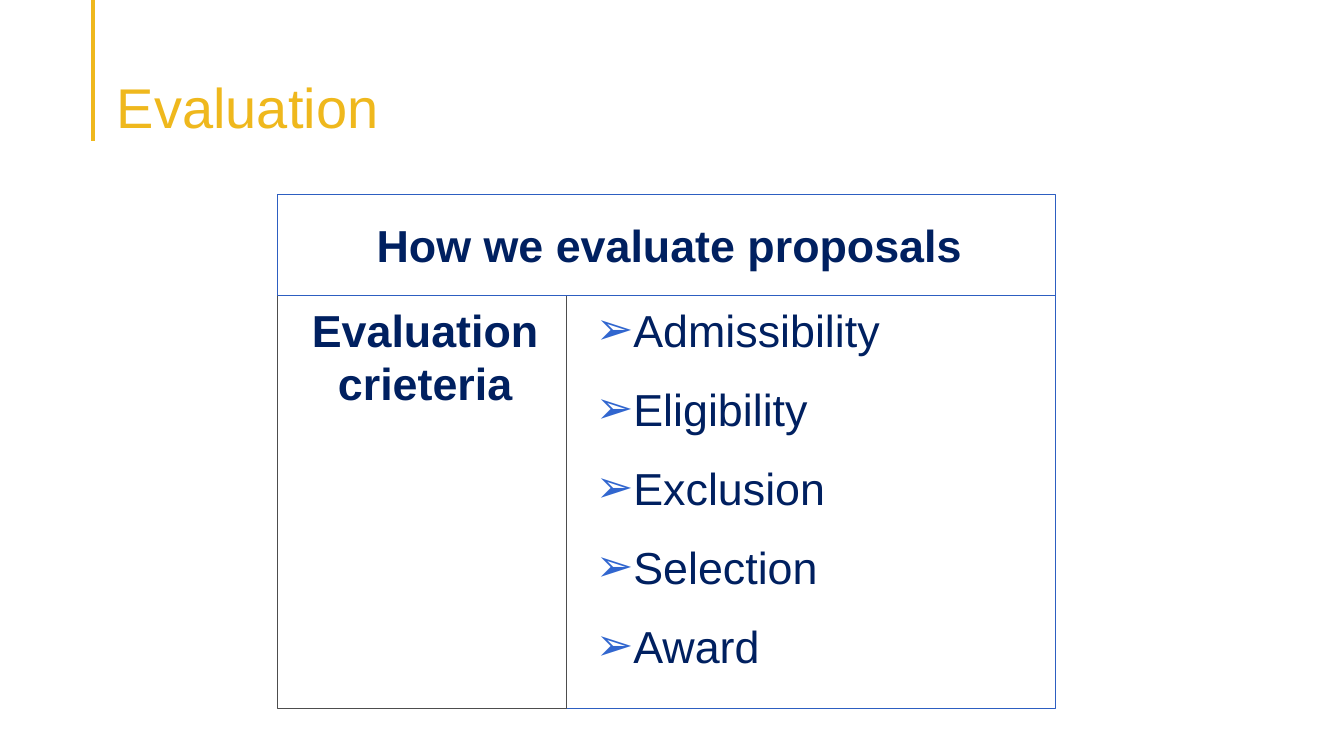
from lxml import etree
from pptx import Presentation
from pptx import util as u
from pptx.dml.color import RGBColor
from pptx.enum import shapes, text
from pptx.oxml import ns

GOLD = RGBColor(0xEF, 0xB8, 0x1D)
NAVY = RGBColor(0x00, 0x20, 0x60)
BLUE = RGBColor(0x2D, 0x5E, 0xC1)
GREY = RGBColor(0x4D, 0x4D, 0x4D)
BULLET_BLUE = RGBColor(0x31, 0x66, 0xCF)
CRITERIA = ["Admissibility", "Eligibility", "Exclusion", "Selection", "Award"]


def style(paragraph, size, color, bold=False):
    """Set the font of a whole paragraph."""
    font = paragraph.font
    font.name, font.size, font.bold = "Arial", u.Pt(size), bold
    font.color.rgb = color


def add_bullet(paragraph):
    """Give a paragraph a blue arrow bullet with a hanging indent."""
    properties = paragraph._p.get_or_add_pPr()
    properties.set("marL", str(u.Pt(31.5)))
    properties.set("indent", str(u.Pt(-18)))
    color = etree.SubElement(properties, ns.qn("a:buClr"))
    etree.SubElement(color, ns.qn("a:srgbClr"), val=str(BULLET_BLUE))
    etree.SubElement(properties, ns.qn("a:buFont"), typeface="Arial")
    etree.SubElement(properties, ns.qn("a:buChar"), char="➢")


def add_panel(slide, box, line_color, lines, bulleted=False, middle=False):
    """Draw an outlined panel with its lines of text."""
    shape = slide.shapes.add_shape(shapes.MSO_SHAPE.RECTANGLE, *map(u.Pt, box))
    shape.shadow.inherit = False
    shape.fill.background()
    shape.line.color.rgb = line_color
    shape.line.width = u.Pt(0.75)
    frame = shape.text_frame
    frame.word_wrap = True
    frame.margin_top = u.Pt(3.6 if middle else 5)
    frame.vertical_anchor = text.MSO_ANCHOR.MIDDLE if middle else text.MSO_ANCHOR.TOP
    for index, line in enumerate(lines):
        paragraph = frame.add_paragraph() if index else frame.paragraphs[0]
        paragraph.text = line
        paragraph.line_spacing = u.Pt(38.4)
        if bulleted:
            paragraph.alignment = text.PP_ALIGN.LEFT
            paragraph.space_after = u.Pt(18)
            add_bullet(paragraph)
        else:
            paragraph.alignment = text.PP_ALIGN.CENTER
            paragraph._p.get_or_add_pPr().set("marL", str(u.Pt(4.5)))
        style(paragraph, 32, NAVY, bold=not bulleted)


def add_title(slide, left, top, width, height):
    """Place the title and the gold rule to its left."""
    rule_x = u.Pt(left - 10)
    rule = slide.shapes.add_connector(
        shapes.MSO_CONNECTOR.STRAIGHT, rule_x, 0, rule_x, u.Pt(top + height + 0.5))
    rule.line.color.rgb = GOLD
    rule.line.width = u.Pt(2.25)
    etree.SubElement(rule._element.spPr, ns.qn("a:effectLst"))
    title = slide.shapes.add_textbox(*map(u.Pt, (left, top, width, height)))
    frame = title.text_frame
    frame.word_wrap = True
    frame.margin_bottom = 0
    frame.vertical_anchor = text.MSO_ANCHOR.BOTTOM
    paragraph = frame.paragraphs[0]
    paragraph.text = "Evaluation"
    paragraph.line_spacing = 0.9
    style(paragraph, 40, GOLD)


def add_evaluation_grid(slide, left, top, width, height):
    """Lay out the heading above the label and the criteria."""
    header, label = 72, 207
    body_top, body_height = top + header, height - header
    add_panel(slide, (left + label, body_top, width - label, body_height),
              BLUE, CRITERIA, bulleted=True)
    add_panel(slide, (left, body_top, label, body_height),
              GREY, ["Evaluation crieteria"])
    add_panel(slide, (left, top, width, header),
              BLUE, ["How we evaluate proposals"], middle=True)


def main():
    """Build and save the slide."""
    presentation = Presentation()
    presentation.slide_width, presentation.slide_height = u.Pt(960), u.Pt(540)
    slide = presentation.slides.add_slide(presentation.slide_layouts[6])
    add_title(slide, 76.5, 38.5, 828, 62)
    add_evaluation_grid(slide, 198, 139, 556, 367)
    presentation.save("out.pptx")


if __name__ == "__main__":
    main()
